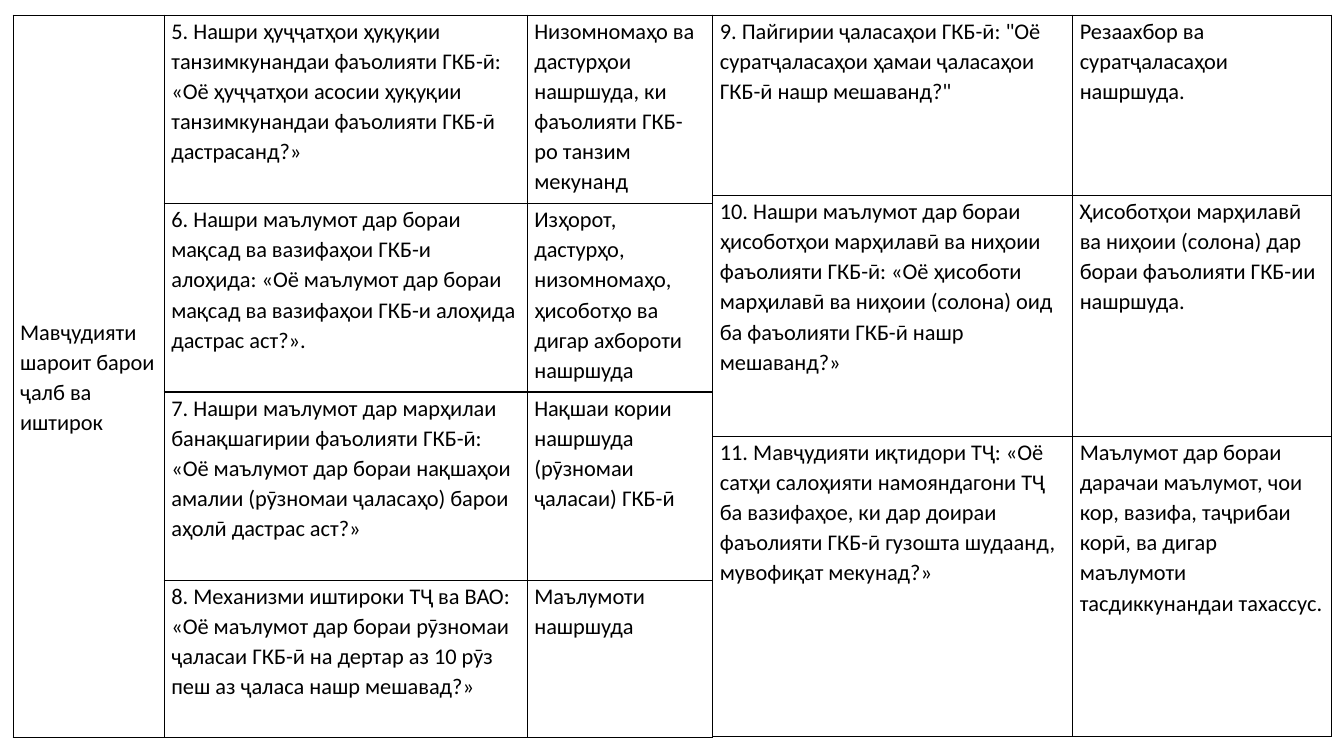
import pptx
import pptx.util
import pptx.dml.color
import pptx.enum.text
import lxml.etree
from pptx.util import Inches

BLACK = pptx.dml.color.RGBColor(0, 0, 0)
A = "{http://schemas.openxmlformats.org/drawingml/2006/main}"

prs = pptx.Presentation()
prs.slide_width = Inches(13.33)
prs.slide_height = Inches(7.5)
s = prs.slides.add_slide(prs.slide_layouts[6])


def add_borders(cell):
    tc_pr = cell._tc.get_or_add_tcPr()
    for side in ("lnL", "lnR", "lnT", "lnB"):
        ln = lxml.etree.SubElement(tc_pr, A + side, w=str(pptx.util.Pt(1)))
        fill = lxml.etree.SubElement(ln, A + "solidFill")
        lxml.etree.SubElement(fill, A + "srgbClr", val=str(BLACK))


def add_grid(left, widths, heights, rows):
    frame = s.shapes.add_table(len(heights), len(widths), Inches(left), Inches(0.15),
                               Inches(sum(widths)), Inches(sum(heights)))
    table = frame.table
    table.first_row = False
    table.horz_banding = False
    for column, width in zip(table.columns, widths):
        column.width = Inches(width)
    for row, height, texts in zip(table.rows, heights, rows):
        row.height = Inches(height)
        for cell, text in zip(row.cells, texts):
            add_borders(cell)
            cell.fill.background()
            cell.margin_left = cell.margin_right = Inches(0.07)
            cell.margin_top = cell.margin_bottom = 0
            if text:
                p = cell.text_frame.paragraphs[0]
                p.line_spacing = 1.1
                r = p.add_run()
                r.text = text
                r.font.size = pptx.util.Pt(16)
                r.font.name = "Calibri"
                r.font.color.rgb = BLACK
    return table


conditions = add_grid(0.13, [1.5, 3.6, 1.84], [1.87, 1.87, 1.87, 1.56], [
    ("Мавҷудияти шароит барои ҷалб ва иштирок",
     "5. Нашри ҳуҷҷатҳои ҳуқуқии танзимкунандаи фаъолияти ГКБ-ӣ: «Оё ҳуҷҷатҳои асосии "
     "ҳуқуқии танзимкунандаи фаъолияти ГКБ-ӣ дастрасанд?»",
     "Низомномаҳо ва дастурҳои нашршуда, ки фаъолияти ГКБ-ро танзим мекунанд"),
    ("",
     "6. Нашри маълумот дар бораи мақсад ва вазифаҳои ГКБ-и алоҳида: «Оё маълумот дар "
     "бораи мақсад ва вазифаҳои ГКБ-и алоҳида дастрас аст?».",
     "Изҳорот, дастурҳо, низомномаҳо, ҳисоботҳо ва дигар ахбороти нашршуда"),
    ("",
     "7. Нашри маълумот дар марҳилаи банақшагирии фаъолияти ГКБ-ӣ: «Оё маълумот дар "
     "бораи нақшаҳои амалии (рӯзномаи ҷаласаҳо) барои аҳолӣ дастрас аст?»",
     "Нақшаи кории нашршуда (рӯзномаи ҷаласаи) ГКБ-ӣ"),
    ("",
     "8. Механизми иштироки ТҶ ва ВАО: «Оё маълумот дар бораи рӯзномаи ҷаласаи ГКБ-ӣ на "
     "дертар аз 10 рӯз пеш аз ҷаласа нашр мешавад?»",
     "Маълумоти нашршуда"),
])
topic = conditions.cell(0, 0)
topic.merge(conditions.cell(3, 0))
topic.vertical_anchor = pptx.enum.text.MSO_ANCHOR.MIDDLE

add_grid(7.07, [3.57, 2.57], [1.79, 2.39, 2.98], [
    ("9. Пайгирии ҷаласаҳои ГКБ-ӣ: \"Оё суратҷаласаҳои ҳамаи ҷаласаҳои ГКБ-ӣ нашр мешаванд?\"",
     "Резаахбор ва суратҷаласаҳои нашршуда."),
    ("10. Нашри маълумот дар бораи ҳисоботҳои марҳилавӣ ва ниҳоии фаъолияти ГКБ-ӣ: «Оё "
     "ҳисоботи марҳилавӣ ва ниҳоии (солона) оид ба фаъолияти ГКБ-ӣ нашр мешаванд?»",
     "Ҳисоботҳои марҳилавӣ ва ниҳоии (солона) дар бораи фаъолияти ГКБ-ии нашршуда."),
    ("11. Мавҷудияти иқтидори ТҶ: «Оё сатҳи салоҳияти намояндагони ТҶ ба вазифаҳое, ки дар "
     "доираи фаъолияти ГКБ-ӣ гузошта шудаанд, мувофиқат мекунад?»",
     "Маълумот дар бораи дарачаи маълумот, чои кор, вазифа, таҷрибаи корӣ, ва дигар "
     "маълумоти тасдиккунандаи тахассус."),
])

prs.save("out.pptx")
